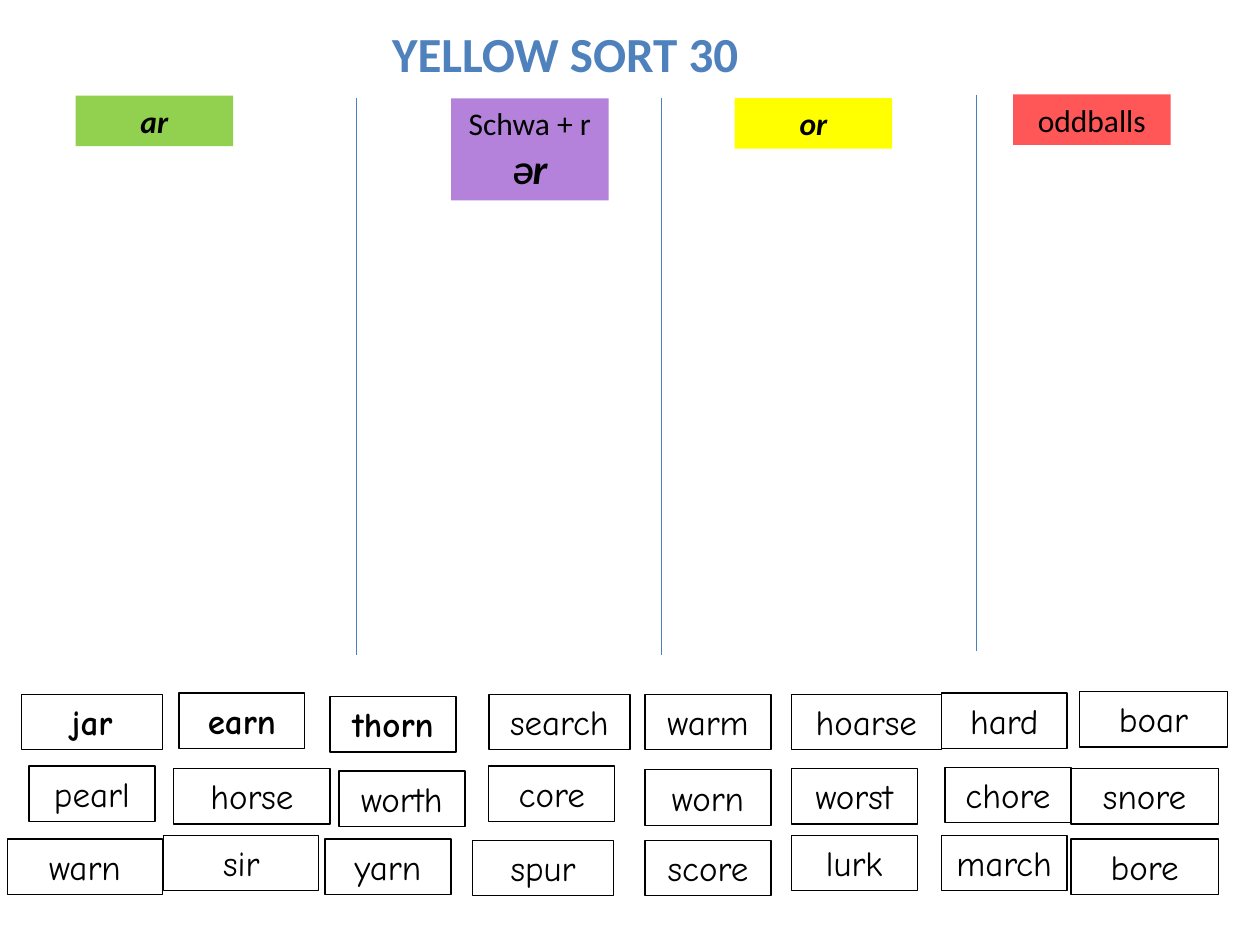
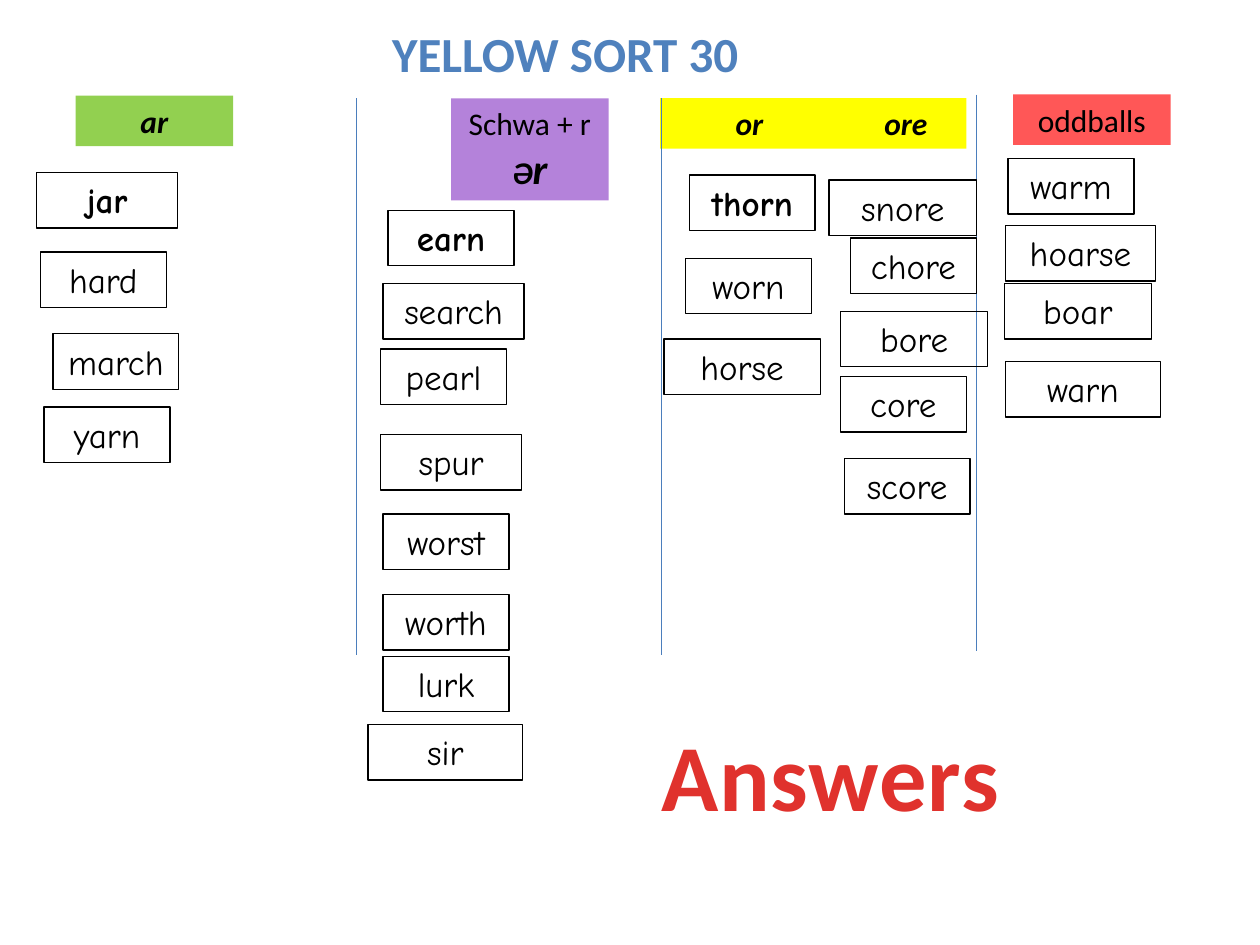
import pptx
import pptx.util
import pptx.dml.color
import pptx.enum.shapes
import pptx.enum.text
import lxml.etree
from dataclasses import dataclass

DRAWING = "http://schemas.openxmlformats.org/drawingml/2006/main"
SHAPES = pptx.enum.shapes.MSO_SHAPE
ALIGN = pptx.enum.text.PP_ALIGN
Inches = pptx.util.Inches


@dataclass(frozen=True)
class Theme:
    label_font: str = "Calibri"
    card_font: str = "Comic Neue"
    title_size: float = 28
    label_size: float = 18
    sound_size: float = 24
    card_size: float = 20
    banner_size: float = 54
    line_width: float = 0.75
    black: str = "000000"
    title: str = "4F81BD"
    divider: str = "4B7EBC"
    green: str = "92D050"
    purple: str = "B482DA"
    yellow: str = "FFFF00"
    red: str = "FF5757"
    banner_top: str = "E0322D"
    banner_bottom: str = "A2201C"


@dataclass(frozen=True)
class Box:
    left: float
    top: float
    width: float
    height: float

    def inner(self, left, top, width, height):
        return Box(self.left + left, self.top + top, width, height)

    def lengths(self):
        return [Inches(n) for n in (self.left, self.top, self.width, self.height)]


THEME = Theme()
BOARD = Box(0, 0.75, 10, 4.45)
TITLE = Box(2.18, 0.14, 4.61, 0.57)
BANNER = Box(5.13, 5.64, 2.92, 1.01)

# Cards keep their width on both slides; all others are one inch wide
CARD_HEIGHT = 0.44
CARD_WIDTHS = {
    "jar": 1.12, "search": 1.12, "spur": 1.12, "hoarse": 1.19,
    "snore": 1.17, "bore": 1.17, "boar": 1.17,
    "horse": 1.24, "sir": 1.23, "warn": 1.23,
}
KEY_WORDS = {"jar", "earn", "thorn"}

# Each group: its box, then word, left and top inside it
WORD_BANK = [
    (Box(0, 5.49, 10, 0.48), [
        ("jar", 0.17, 0.02), ("earn", 1.42, 0.01), ("thorn", 2.62, 0.04),
        ("search", 3.88, 0.02), ("warm", 5.12, 0.02), ("hoarse", 6.28, 0.02),
        ("hard", 7.47, 0.01), ("boar", 8.57, 0)]),
    (Box(0, 6.08, 10, 0.48), [
        ("pearl", 0.23, 0), ("horse", 1.38, 0.02), ("worth", 2.69, 0.04),
        ("core", 3.88, 0), ("worn", 5.12, 0.03), ("worst", 6.28, 0.02),
        ("chore", 7.5, 0.01), ("snore", 8.5, 0.02)]),
    (Box(0, 6.63, 10, 0.48), [
        ("warn", 0.06, 0.03), ("sir", 1.3, 0), ("yarn", 2.58, 0.03),
        ("spur", 3.75, 0.04), ("score", 5.12, 0.04), ("lurk", 6.28, 0),
        ("march", 7.47, 0), ("bore", 8.5, 0.03)]),
]
ANSWERS = [
    (Box(0, 1.25, 2.83, 5), [
        ("jar", 0.29, 0.12), ("hard", 0.32, 0.75),
        ("march", 0.42, 1.4), ("yarn", 0.35, 1.98)]),
    (Box(2.83, 1.25, 2.42, 5), [
        ("earn", 0.25, 0.42), ("search", 0.21, 1), ("pearl", 0.19, 1.52),
        ("spur", 0.19, 2.2), ("worst", 0.21, 2.83), ("worth", 0.21, 3.47),
        ("lurk", 0.21, 3.96), ("sir", 0.09, 4.5)]),
    (Box(5.25, 1.25, 1.25, 5), [
        ("thorn", 0.22, 0.14), ("worn", 0.19, 0.8), ("horse", 0.02, 1.44)]),
    (Box(6.5, 1.25, 1.25, 5), [
        ("snore", 0.08, 0.18), ("chore", 0.25, 0.64), ("bore", 0.17, 1.22),
        ("core", 0.17, 1.74), ("score", 0.2, 2.39)]),
    (Box(7.75, 1.25, 2.25, 5), [
        ("warm", 0.25, 0.01), ("hoarse", 0.23, 0.54),
        ("boar", 0.22, 1), ("warn", 0.23, 1.62)]),
]


def colour(value):
    return pptx.dml.color.RGBColor.from_string(value)


def style(font, name, size, ink=THEME.black, bold=False, italic=False):
    font.name, font.size = name, pptx.util.Pt(size)
    font.bold, font.italic = bold, italic
    font.color.rgb = colour(ink)


def fit_text(shape, wrap=True):
    frame = shape.text_frame
    frame.word_wrap = wrap
    frame.auto_size = pptx.enum.text.MSO_AUTO_SIZE.SHAPE_TO_FIT_TEXT
    frame.vertical_anchor = pptx.enum.text.MSO_ANCHOR.TOP
    return frame


def add_rectangle(page, box, fill=None, line=None):
    shape = page.shapes.add_shape(SHAPES.RECTANGLE, *box.lengths())
    shape.shadow.inherit = False
    if fill:
        shape.fill.solid()
        shape.fill.fore_color.rgb = colour(fill)
    else:
        shape.fill.background()
    if line:
        shape.line.color.rgb = colour(line)
        shape.line.width = pptx.util.Pt(THEME.line_width)
    else:
        shape.line.fill.background()
    return fit_text(shape)


def add_label(page, box, text, fill, emphasis=True):
    frame = add_rectangle(page, box, fill)
    frame.text = text
    for para in frame.paragraphs:
        para.alignment = ALIGN.CENTER
        for span in para.runs:
            style(span.font, THEME.label_font, THEME.label_size,
                  bold=emphasis, italic=emphasis)
    return frame


def add_schwa_label(page, box):
    frame = add_label(page, box, "Schwa + r", THEME.purple, emphasis=False)
    para = frame.add_paragraph()
    para.alignment = ALIGN.CENTER
    for text, size in (("Ə", THEME.label_size), ("r", THEME.sound_size)):
        span = para.add_run()
        span.text = text
        style(span.font, THEME.label_font, size, bold=True, italic=True)


def add_tabbed_label(page, box, words, stops, fill):
    frame = add_rectangle(page, box, fill)
    para = frame.paragraphs[0]
    para.alignment = ALIGN.LEFT
    tabs = lxml.etree.SubElement(para._p.get_or_add_pPr(), f"{{{DRAWING}}}tabLst")
    for stop in stops:
        lxml.etree.SubElement(tabs, f"{{{DRAWING}}}tab",
                              pos=str(Inches(stop)), algn="l")
    para.text = "".join("\t" + word for word in words)
    for span in para.runs:
        style(span.font, THEME.label_font, THEME.label_size, bold=True, italic=True)


def add_divider(page, box, left, top):
    start, end = box.top + top, box.top + top + 4.42
    line = page.shapes.add_connector(
        pptx.enum.shapes.MSO_CONNECTOR.STRAIGHT,
        Inches(box.left + left), Inches(start), Inches(box.left + left), Inches(end))
    line.line.color.rgb = colour(THEME.divider)
    line.line.width = pptx.util.Pt(THEME.line_width)
    lxml.etree.SubElement(line._element.spPr, f"{{{DRAWING}}}effectLst")


def add_board(page, box, split_or):
    # Column headings
    add_label(page, box.inner(0.6, 0.01, 1.25, 0.4), "ar", THEME.green)
    add_schwa_label(page, box.inner(3.58, 0.03, 1.25, 0.81))
    if split_or:
        add_tabbed_label(page, box.inner(5.24, 0.03, 2.43, 0.4),
                         ("or", "ore"), (0.5, 1.68), THEME.yellow)
    else:
        add_label(page, box.inner(5.83, 0.03, 1.25, 0.4), "or", THEME.yellow)
    add_label(page, box.inner(8.04, 0, 1.25, 0.4), "oddballs", THEME.red,
              emphasis=False)
    # Column dividers
    for left, top in ((2.83, 0.03), (5.25, 0.03), (7.75, 0)):
        add_divider(page, box, left, top)


def add_cards(page, box, cards):
    for word, left, top in cards:
        width = CARD_WIDTHS.get(word, 1)
        frame = add_rectangle(page, box.inner(left, top, width, CARD_HEIGHT),
                              line=THEME.black)
        para = frame.paragraphs[0]
        para.text = word
        para.alignment = ALIGN.CENTER
        style(para.runs[0].font, THEME.card_font, THEME.card_size,
              bold=word in KEY_WORDS)


def add_heading(page, box, text, size, ink, wrap=True):
    frame = fit_text(page.shapes.add_textbox(*box.lengths()), wrap)
    para = frame.paragraphs[0]
    para.text = text
    para.alignment = ALIGN.CENTER
    span = para.runs[0]
    style(span.font, THEME.label_font, size, ink, bold=True)
    return span


def add_banner(page, box):
    span = add_heading(page, box, "Answers", THEME.banner_size,
                       THEME.banner_top, wrap=False)
    span._r.get_or_add_rPr().set("spc", "50")
    # Red gradient running downwards
    fill = span.font.fill
    fill.gradient()
    fill.gradient_angle = 270
    shades = ((0.25, THEME.banner_top), (1, THEME.banner_bottom))
    for stop, (position, shade) in zip(fill.gradient_stops, shades):
        stop.position = position
        stop.color.rgb = colour(shade)


def add_sort_page(deck, groups, split_or=False):
    page = deck.slides.add_slide(deck.slide_layouts[6])
    add_board(page, BOARD, split_or)
    for box, cards in groups:
        add_cards(page, box, cards)
    add_heading(page, TITLE, "YELLOW SORT 30", THEME.title_size, THEME.title)
    return page


def main():
    deck = pptx.Presentation()
    deck.slide_width, deck.slide_height = Inches(10), Inches(7.5)
    add_sort_page(deck, WORD_BANK)
    answer_page = add_sort_page(deck, ANSWERS, split_or=True)
    add_banner(answer_page, BANNER)
    deck.save("out.pptx")


if __name__ == "__main__":
    main()
